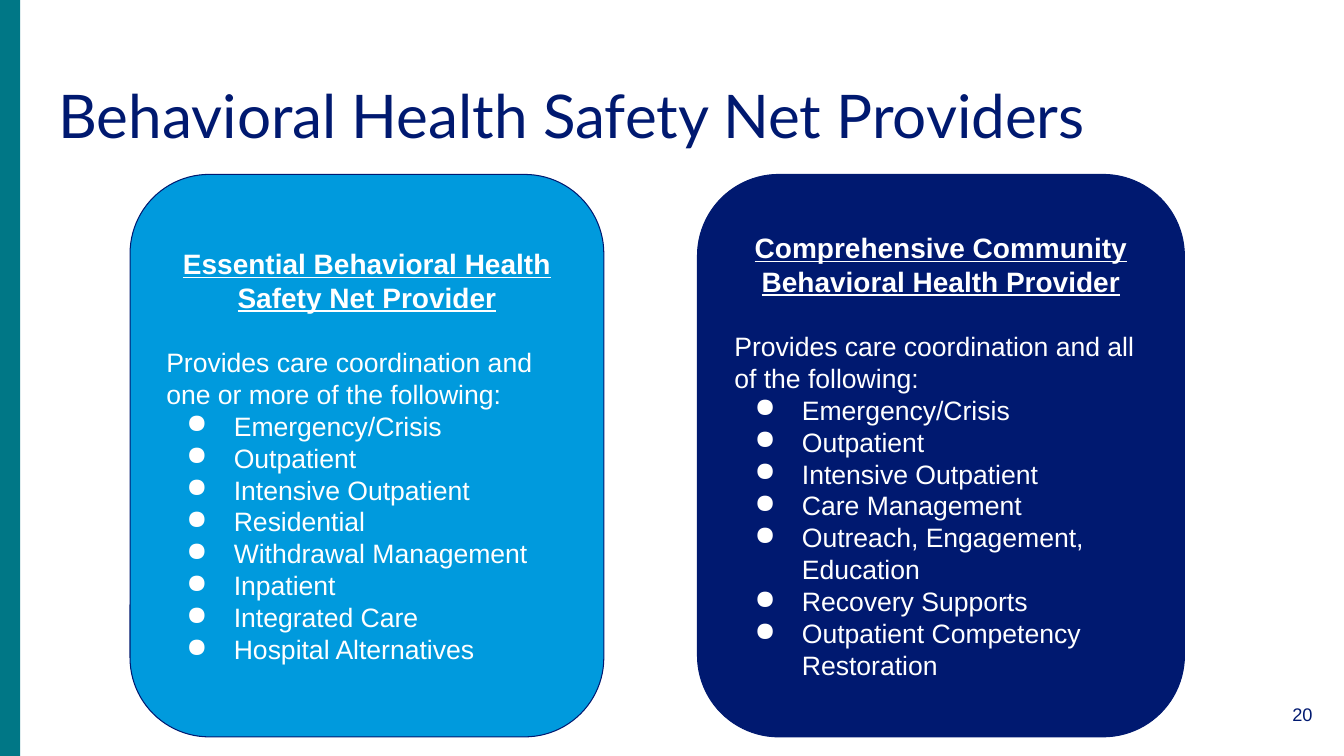
from lxml import etree
from pptx import Presentation, util as u
from pptx.dml.color import RGBColor
from pptx.enum import shapes, text
from pptx.oxml import ns

HUES = {"teal": "007786", "navy": "001970", "sky": "009ADD", "white": "FFFFFF"}
WIDE, HIGH = u.Inches(13.333), u.Inches(7.5)
PAD = u.Inches(0.13)
TOP, TALL = 23.07, 74.4

CARDS = [
    (9.68, 35.25, "sky", "Essential Behavioral Health Safety Net Provider",
     "Provides care coordination and one or more of the following:",
     ["Emergency/Crisis", "Outpatient", "Intensive Outpatient", "Residential",
      "Withdrawal Management", "Inpatient", "Integrated Care",
      "Hospital Alternatives"]),
    (51.9, 36.23, "navy", "Comprehensive Community Behavioral Health Provider",
     "Provides care coordination and all of the following:",
     ["Emergency/Crisis", "Outpatient", "Intensive Outpatient",
      "Care Management", "Outreach, Engagement, Education",
      "Recovery Supports", "Outpatient Competency Restoration"]),
]


def hue(name):
    return RGBColor.from_string(HUES[name])


def area(left, top, width, height):
    return [int(side * share / 100) for side, share in
            zip((WIDE, HIGH, WIDE, HIGH), (left, top, width, height))]


def apply(item, form):
    for key, value in form.items():
        setattr(item, key, value)


def frame(shape, anchor):
    body = shape.text_frame
    apply(body, {"word_wrap": True, "vertical_anchor": anchor,
                 "margin_left": PAD, "margin_right": PAD,
                 "margin_top": PAD, "margin_bottom": PAD})
    return body


def write(para, words, size, color, face="Arial", align="LEFT", **form):
    para.alignment = getattr(text.PP_ALIGN, align)
    run = para.add_run()
    run.text = words
    apply(run.font, {"size": u.Pt(size), "name": face, **form})
    run.font.color.rgb = hue(color)


def dot(para):
    props = para._p.get_or_add_pPr()
    props.set("marL", str(u.Inches(0.67)))
    props.set("indent", str(u.Inches(-0.47)))
    tint = etree.SubElement(props, ns.qn("a:buClr"))
    etree.SubElement(tint, ns.qn("a:srgbClr"), val=HUES["white"])
    etree.SubElement(props, ns.qn("a:buChar"), char="●")


def block(slide, kind, place, color):
    shape = slide.shapes.add_shape(kind, *area(*place))
    shape.shadow.inherit = False
    shape.fill.solid()
    shape.fill.fore_color.rgb = hue(color)
    shape.line.fill.background()
    return shape


def label(slide, place, anchor, words, size, **form):
    box = slide.shapes.add_textbox(*area(*place))
    write(frame(box, anchor).paragraphs[0], words, size, "navy", **form)


def card(slide, left, width, color, head, intro, items):
    shape = block(slide, shapes.MSO_SHAPE.ROUNDED_RECTANGLE,
                  (left, TOP, width, TALL), color)
    shape.adjustments[0] = 0.167
    shape.line.color.rgb = hue("navy")
    shape.line.width = u.Pt(0.75)
    body = frame(shape, text.MSO_ANCHOR.MIDDLE)
    write(body.paragraphs[0], head, 20, "white", align="CENTER",
          bold=True, underline=True)
    lead = body.add_paragraph()
    lead.space_before = u.Pt(23)
    write(lead, intro, 19, "white")
    for item in items:
        para = body.add_paragraph()
        dot(para)
        write(para, item, 19, "white")


def main():
    deck = Presentation()
    apply(deck, {"slide_width": WIDE, "slide_height": HIGH})
    slide = deck.slides.add_slide(deck.slide_layouts[6])
    block(slide, shapes.MSO_SHAPE.RECTANGLE, (0, 0, 1.5, 100), "teal")
    label(slide, (3.38, 8.67, 93.15, 11.07), text.MSO_ANCHOR.TOP,
          "Behavioral Health Safety Net Providers", 43, face="Lato")
    label(slide, (92.63, 90.67, 6, 7.6), text.MSO_ANCHOR.MIDDLE,
          "20", 13, align="RIGHT")
    for entry in CARDS:
        card(slide, *entry)
    deck.save("out.pptx")


if __name__ == "__main__":
    main()
